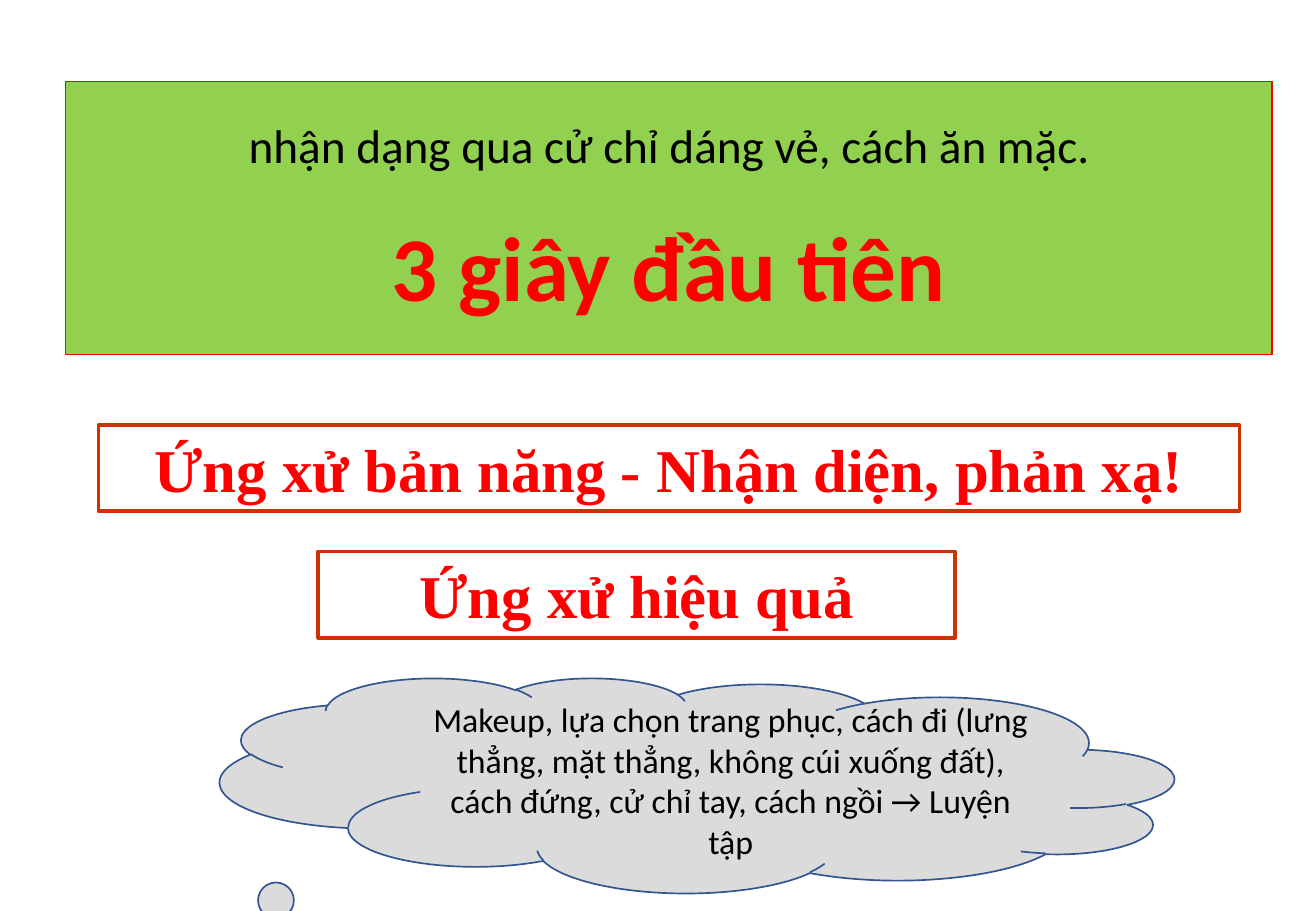
from pptx import Presentation
from pptx.dml.color import RGBColor
from pptx.enum.shapes import MSO_SHAPE
from pptx.enum.text import MSO_ANCHOR, MSO_AUTO_SIZE, PP_ALIGN
from pptx.util import Inches, Pt

RECT = MSO_SHAPE.RECTANGLE
CLOUD = MSO_SHAPE.CLOUD_CALLOUT
MIDDLE = MSO_ANCHOR.MIDDLE
NO_FIT = MSO_AUTO_SIZE.NONE
CENTER = PP_ALIGN.CENTER

BLACK = RGBColor(0x00, 0x00, 0x00)
RED = RGBColor(0xFF, 0x00, 0x00)
GREEN = RGBColor(0x92, 0xD0, 0x50)
RUST = RGBColor(0xCC, 0x33, 0x00)
GREY = RGBColor(0xDB, 0xDB, 0xDB)
BLUE = RGBColor(0x32, 0x54, 0x91)


class Deck:
    """Holds the fonts and the current slide, and draws its elements."""

    sans = "Calibri"
    serif = "Times New Roman"

    def __init__(self, prs):
        self.s = prs.slides.add_slide(prs.slide_layouts[5])

    def outline(self, sp, fill, line, width):
        if fill is None:
            sp.fill.background()
        else:
            sp.fill.solid()
            sp.fill.fore_color.rgb = fill
        sp.line.color.rgb = line
        sp.line.width = Pt(width)
        tf = sp.text_frame
        tf.word_wrap = True
        tf.auto_size = NO_FIT
        tf.vertical_anchor = MIDDLE

    def add_text(self, p, text, size, color, font, bold=False):
        p.alignment = CENTER
        r = p.add_run()
        r.text = text
        r.font.name = font
        r.font.size = Pt(size)
        r.font.bold = bold
        r.font.color.rgb = color

    def shape(self, kind, x, y, w, h, fill, line, width):
        sp = self.s.shapes.add_shape(kind, Inches(x), Inches(y), Inches(w), Inches(h))
        sp.shadow.inherit = False
        self.outline(sp, fill, line, width)
        return sp

    def title(self, x, y, w, h, lead, headline):
        sp = self.s.shapes.title
        sp.left, sp.top, sp.width, sp.height = Inches(x), Inches(y), Inches(w), Inches(h)
        self.outline(sp, GREEN, RED, 1)
        tf = sp.text_frame
        self.add_text(tf.paragraphs[0], lead, 28, BLACK, self.sans)
        p = tf.add_paragraph()
        p.space_before = Pt(22)
        self.add_text(p, headline, 54, RED, self.sans, True)

    def banner(self, x, y, w, text):
        sp = self.shape(RECT, x, y, w, 0.71, None, RUST, 2.25)
        self.add_text(sp.text_frame.paragraphs[0], text, 36, RED, self.serif, True)

    def cloud(self, x, y, w, h, tail, text):
        sp = self.shape(CLOUD, x, y, w, h, GREY, BLUE, 1)
        sp.adjustments[0], sp.adjustments[1] = tail
        sp._element.spPr.xfrm.set("flipH", "1")
        self.add_text(sp.text_frame.paragraphs[0], text, 20, BLACK, self.sans)


def main():
    prs = Presentation()
    prs.slide_width, prs.slide_height = Inches(10.83), Inches(7.5)
    deck = Deck(prs)
    deck.title(0.54, 0.67, 9.93, 2.25,
               "nhận dạng qua cử chỉ dáng vẻ, cách ăn mặc.", "3 giây đầu tiên")
    deck.banner(0.81, 3.5, 9.39, "Ứng xử bản năng - Nhận diện, phản xạ!")
    deck.banner(2.62, 4.54, 5.24, "Ứng xử hiệu quả")
    deck.cloud(1.81, 5.58, 7.85, 1.77, (0.7, 0.85),
               "Makeup, lựa chọn trang phục, cách đi (lưng thẳng, mặt thẳng, "
               "không cúi xuống đất), cách đứng, cử chỉ tay, cách ngồi → Luyện tập")
    prs.save("out.pptx")


if __name__ == "__main__":
    main()
